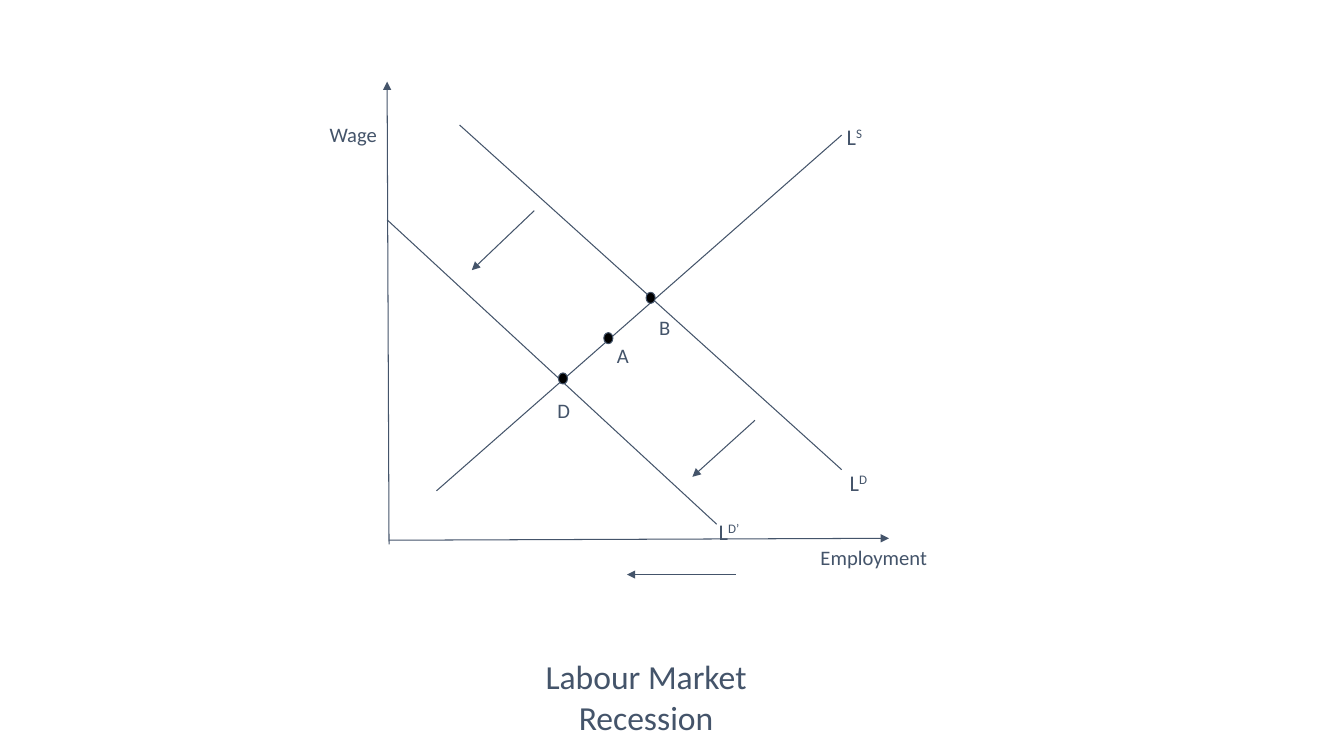
from lxml import etree
from pptx import Presentation
from pptx.dml.color import RGBColor
from pptx.enum import shapes, text
from pptx.oxml.ns import qn
from pptx.util import Pt

SLATE = RGBColor(0x44, 0x54, 0x6A)
BLACK = RGBColor(0, 0, 0)
INSET = 9.36
DOT_WIDTH, DOT_HEIGHT = 6.5, 7.9

# Start and end of each line, relative to the diagram's top left corner
AXES = [(51.9, 330.8, 50.5, 0.3), (51.9, 327.9, 409, 326.5)]
CURVES = [
    (85.8, 292.6, 375.2, 38.5),   # supply
    (102.3, 31.3, 375.2, 277.5),  # demand
    (50.5, 99, 285.9, 316.4),     # demand in recession
]
SHIFTS = [
    (299.6, 352.4, 221.8, 352.4),
    (155.6, 92.5, 111, 135),
    (313.3, 242.2, 268.6, 282.6),
]
# Wording, superscript, left, top, width, size
LABELS = [
    ("Wage", "", 0, 20.5, 101.5, 14.7),
    ("Employment", "", 350.7, 322.2, 121, 14.7),
    ("L", "S", 369.4, 20.5, 51, 16),
    ("L", "D", 371.6, 267.4, 51, 16),
    ("L", "D’", 278, 302.7, 51, 16),
    ("B", "", 235.5, 158, 51, 14.7),
    ("A", "", 205.3, 178.2, 51, 14.7),
    ("D", "", 162.8, 217, 51, 14.7),
]
EQUILIBRIA = [(172.9, 208.4), (205.3, 179.6), (235.5, 150.8)]


def add_line(slide, start_x, start_y, end_x, end_y, arrow=False):
    line = slide.shapes.add_connector(
        shapes.MSO_CONNECTOR.STRAIGHT,
        Pt(start_x), Pt(start_y), Pt(end_x), Pt(end_y))
    line.line.color.rgb = SLATE
    line.line.width = Pt(0.75)
    if arrow:
        etree.SubElement(line.line._get_or_add_ln(), qn("a:tailEnd"), type="triangle")
    etree.SubElement(line._element.spPr, qn("a:effectLst"))


def add_words(slide, left, top, width, height):
    """Add an empty, wrapping text box and return its text frame."""
    frame = slide.shapes.add_textbox(Pt(left), Pt(top), Pt(width), Pt(height)).text_frame
    frame.word_wrap = True
    frame.vertical_anchor = text.MSO_ANCHOR.TOP
    frame.margin_left = frame.margin_right = Pt(INSET)
    frame.margin_top = frame.margin_bottom = Pt(INSET)
    return frame


def style(paragraph, size):
    paragraph.font.name = "Calibri"
    paragraph.font.size = Pt(size)
    paragraph.font.color.rgb = SLATE


def add_label(slide, wording, superscript, left, top, width, size):
    paragraph = add_words(slide, left, top, width, 20.9).paragraphs[0]
    style(paragraph, size)
    paragraph.add_run().text = wording
    if superscript:
        raised = paragraph.add_run()
        raised.text = superscript
        raised.font._element.set("baseline", "30000")


def add_equilibrium(slide, left, top):
    dot = slide.shapes.add_shape(
        shapes.MSO_SHAPE.OVAL, Pt(left), Pt(top), Pt(DOT_WIDTH), Pt(DOT_HEIGHT))
    dot.shadow.inherit = False
    dot.fill.solid()
    dot.fill.fore_color.rgb = BLACK
    dot.line.color.rgb = SLATE
    dot.line.width = Pt(0.75)


def add_diagram(slide, left, top):
    for lines, arrow in ((AXES, True), (CURVES, False), (SHIFTS, True)):
        for x1, y1, x2, y2 in lines:
            add_line(slide, left + x1, top + y1, left + x2, top + y2, arrow)
    for wording, superscript, x, y, width, size in LABELS:
        add_label(slide, wording, superscript, left + x, top + y, width, size)
    for x, y in EQUILIBRIA:
        add_equilibrium(slide, left + x, top + y)


def add_caption(slide, left, top, width, height):
    frame = add_words(slide, left, top, width, height)
    frame.text = "Labour Market\nRecession"
    for paragraph in frame.paragraphs:
        paragraph.alignment = text.PP_ALIGN.CENTER
        style(paragraph, 24)


def main():
    deck = Presentation()
    deck.slide_width, deck.slide_height = Pt(960), Pt(540)
    slide = deck.slides.add_slide(deck.slide_layouts[6])
    add_diagram(slide, 226, 58)
    add_caption(slide, 39.6, 459.4, 843.8, 41)
    deck.save("out.pptx")


if __name__ == "__main__":
    main()
